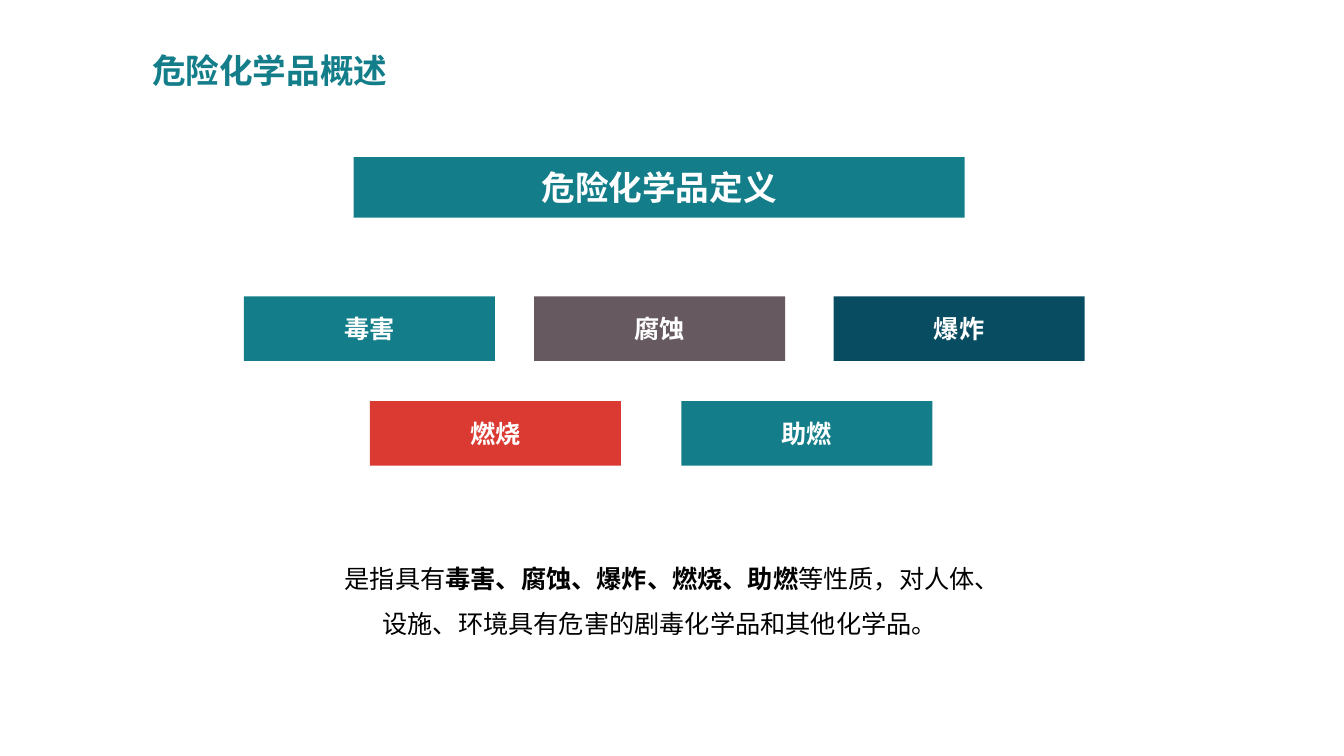
from pptx import Presentation
from pptx.dml.color import RGBColor
from pptx.enum.shapes import MSO_SHAPE
from pptx.enum.text import MSO_ANCHOR, MSO_AUTO_SIZE, PP_ALIGN
from pptx.util import Pt

RECT = MSO_SHAPE.RECTANGLE
TOP, MIDDLE = MSO_ANCHOR.TOP, MSO_ANCHOR.MIDDLE
LEFT, CENTER = PP_ALIGN.LEFT, PP_ALIGN.CENTER
NO_FIT = MSO_AUTO_SIZE.NONE
TITLE_ONLY = 5

COLORS = {
    "teal": "137E89",
    "gray": "66595F",
    "navy": "084C61",
    "red": "DB3A33",
    "white": "FFFFFF",
    "black": "000000",
}
HAZARD_W, HAZARD_H = 179.3, 46.1
HAZARD_ROWS = [
    (0, [(0, "毒害", "teal"), (207.4, "腐蚀", "gray"), (421.2, "爆炸", "navy")]),
    (74.9, [(90, "燃烧", "red"), (312.5, "助燃", "teal")]),
]
DEFINITION = [
    ("是指具有", False),
    ("毒害、腐蚀、爆炸、燃烧、助燃", True),
    ("等性质，对人体、设施、环境具有危害的剧毒化学品和其他化学品。", False),
]


def set_text(tf, runs, size=18, color="white", align=CENTER, anchor=MIDDLE, spacing=1.0):
    """Fill a text frame with one paragraph of (text, bold) runs."""
    tf.word_wrap = True
    tf.auto_size = NO_FIT
    tf.vertical_anchor = anchor
    p = tf.paragraphs[0]
    p.alignment = align
    p.line_spacing = spacing
    for text, bold in runs:
        r = p.add_run()
        r.text = text
        r.font.name = "Arial"
        r.font.size = Pt(size)
        r.font.bold = bold
        r.font.color.rgb = RGBColor.from_string(COLORS[color])


def add_title(s, x, y, w, h, text):
    """Place and format the title placeholder."""
    sp = s.shapes.title
    sp.left, sp.top, sp.width, sp.height = Pt(x), Pt(y), Pt(w), Pt(h)
    set_text(sp.text_frame, [(text, True)], size=24, color="teal", align=LEFT, anchor=TOP)


def add_block(s, x, y, w, h, text, fill, size=18):
    """Draw a filled rectangle with a bold centred label."""
    sp = s.shapes.add_shape(RECT, Pt(x), Pt(y), Pt(w), Pt(h))
    sp.shadow.inherit = False
    sp.fill.solid()
    sp.fill.fore_color.rgb = RGBColor.from_string(COLORS[fill])
    sp.line.fill.background()
    set_text(sp.text_frame, [(text, True)], size=size)


def add_hazards(s, x, y):
    """Lay out the rows of hazard blocks from the given corner."""
    for dy, row in HAZARD_ROWS:
        for dx, text, fill in row:
            add_block(s, x + dx, y + dy, HAZARD_W, HAZARD_H, text, fill)


def add_definition(s, x, y, w, h):
    """Write the definition paragraph in the given box."""
    sp = s.shapes.add_textbox(Pt(x), Pt(y), Pt(w), Pt(h))
    set_text(sp.text_frame, DEFINITION, color="black", anchor=TOP, spacing=1.5)


def main():
    """Build and save the slide."""
    prs = Presentation()
    prs.slide_width, prs.slide_height = Pt(960), Pt(540)
    s = prs.slides.add_slide(prs.slide_layouts[TITLE_ONLY])
    add_title(s, 101.5, 31.7, 240.5, 36, "危险化学品概述")
    add_definition(s, 231.1, 388.1, 480.2, 72.7)
    add_block(s, 252.7, 112.3, 436.3, 43.2, "危险化学品定义", "teal", size=24)
    add_hazards(s, 174.2, 211.7)
    prs.save("out.pptx")


if __name__ == "__main__":
    main()
